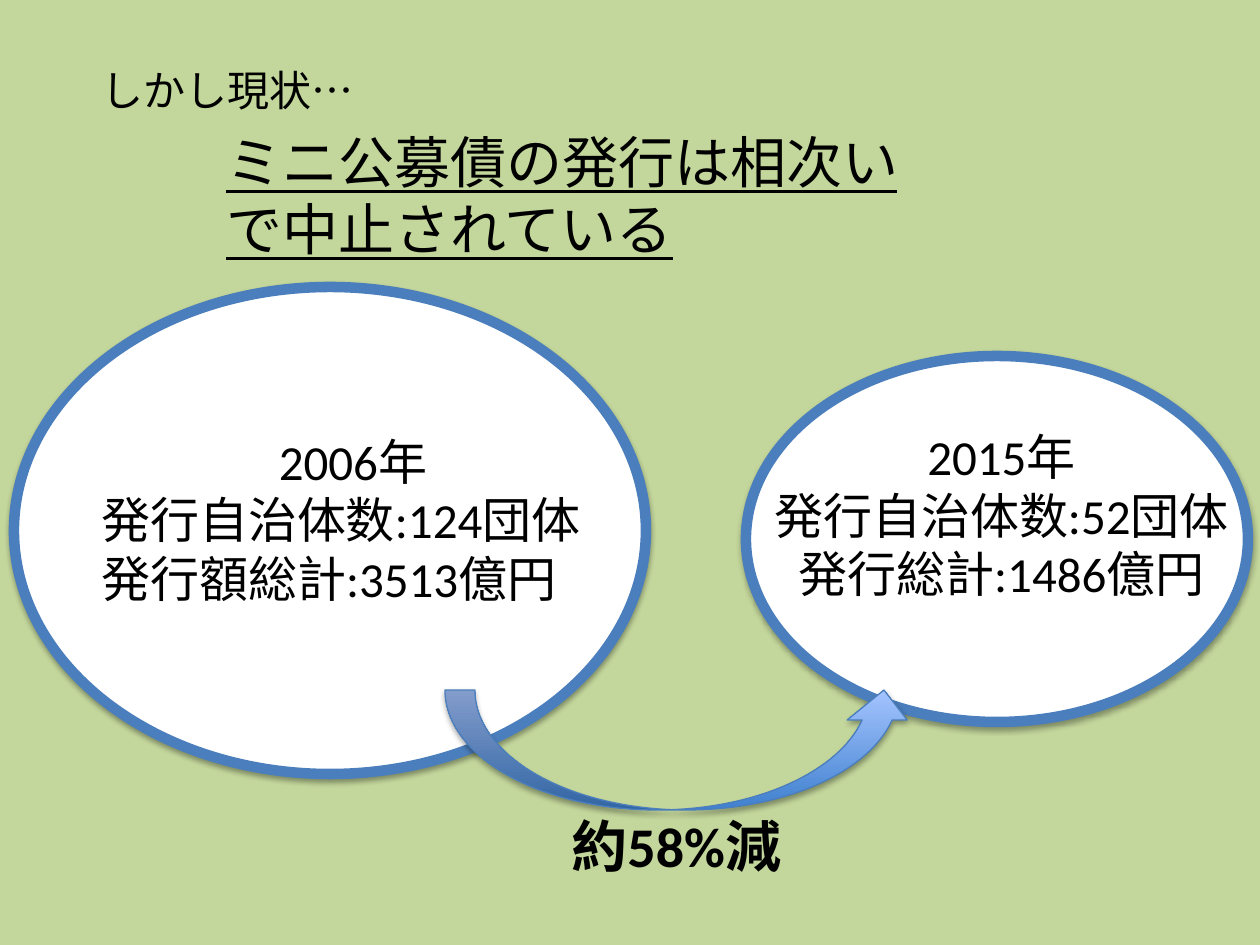
"""Builds a slide on the decline of mini public bond issues from 2006 to 2015."""
from lxml import etree
from pptx import Presentation
from pptx.dml.color import RGBColor
from pptx.enum.shapes import MSO_SHAPE
from pptx.enum.text import MSO_AUTO_SIZE, PP_ALIGN
from pptx.oxml.ns import qn
from pptx.util import Emu, Pt

OVAL, ARROW = MSO_SHAPE.OVAL, MSO_SHAPE.CURVED_UP_ARROW
GROW = MSO_AUTO_SIZE.SHAPE_TO_FIT_TEXT
LEFT, CENTER = PP_ALIGN.LEFT, PP_ALIGN.CENTER
PX = 914400 / 126

prs = Presentation()
prs.slide_width, prs.slide_height = Emu(int(1260 * PX)), Emu(int(945 * PX))
s = prs.slides.add_slide(prs.slide_layouts[6])
s.background.fill.solid()
s.background.fill.fore_color.rgb = RGBColor.from_string("C3D69B")


def add_text(lines, box, size=28, aligns=(LEFT,), bold=False, underline=False):
    tb = s.shapes.add_textbox(*[Emu(int(v * PX)) for v in box])
    tf = tb.text_frame
    tf.word_wrap = True
    tf.auto_size = GROW
    tf.text = "\n".join(lines)
    for p, align in zip(tf.paragraphs, aligns):
        p.alignment = align
        f = p.runs[0].font
        f.name, f.size, f.bold, f.underline = "Calibri", Pt(size), bold, underline
        f.color.rgb = RGBColor.from_string("000000")


def add_shadowed(kind, box, line_width):
    sp = s.shapes.add_shape(kind, *[Emu(int(v * PX)) for v in box])
    sp.line.color.rgb = RGBColor.from_string("4B7EBC")
    sp.line.width = Pt(line_width)
    sp.shadow.inherit = False
    effects = sp.element.spPr.find(qn("a:effectLst"))
    shadow = etree.SubElement(effects, qn("a:outerShdw"), blurRad="40000",
                              dist="23000", dir="5400000", rotWithShape="0")
    color = etree.SubElement(shadow, qn("a:srgbClr"), val="000000")
    etree.SubElement(color, qn("a:alpha"), val="35000")
    return sp


add_text(["ミニ公募債の発行は相次いで中止されている"], (214, 121, 746, 149),
         size=32, underline=True)
add_text(["しかし現状…"], (89, 58, 301, 63), size=24)

for box in ((14, 287, 632, 487), (746, 356, 502, 366)):
    sp = add_shadowed(OVAL, box, 6)
    sp.fill.solid()
    sp.fill.fore_color.rgb = RGBColor.from_string("FFFFFF")

add_text(["2006年", "発行自治体数:124団体", "発行額総計:3513億円"],
         (89, 425, 528, 190), aligns=(CENTER, LEFT, LEFT))
add_text(["2015年", "発行自治体数:52団体", "発行総計:1486億円"],
         (756, 420, 491, 190), aligns=(CENTER,) * 3)

arrow = add_shadowed(ARROW, (445, 690, 469, 120), 0.75)
arrow.fill.gradient()
arrow.fill.gradient_angle = 90
for stop, position, color in zip(arrow.fill.gradient_stops, (0, 1), ("3F80CE", "A4C4FF")):
    stop.position = position
    stop.color.rgb = RGBColor.from_string(color)

add_text(["約58%減"], (559, 805, 437, 81), size=32, bold=True)

prs.save("out.pptx")
